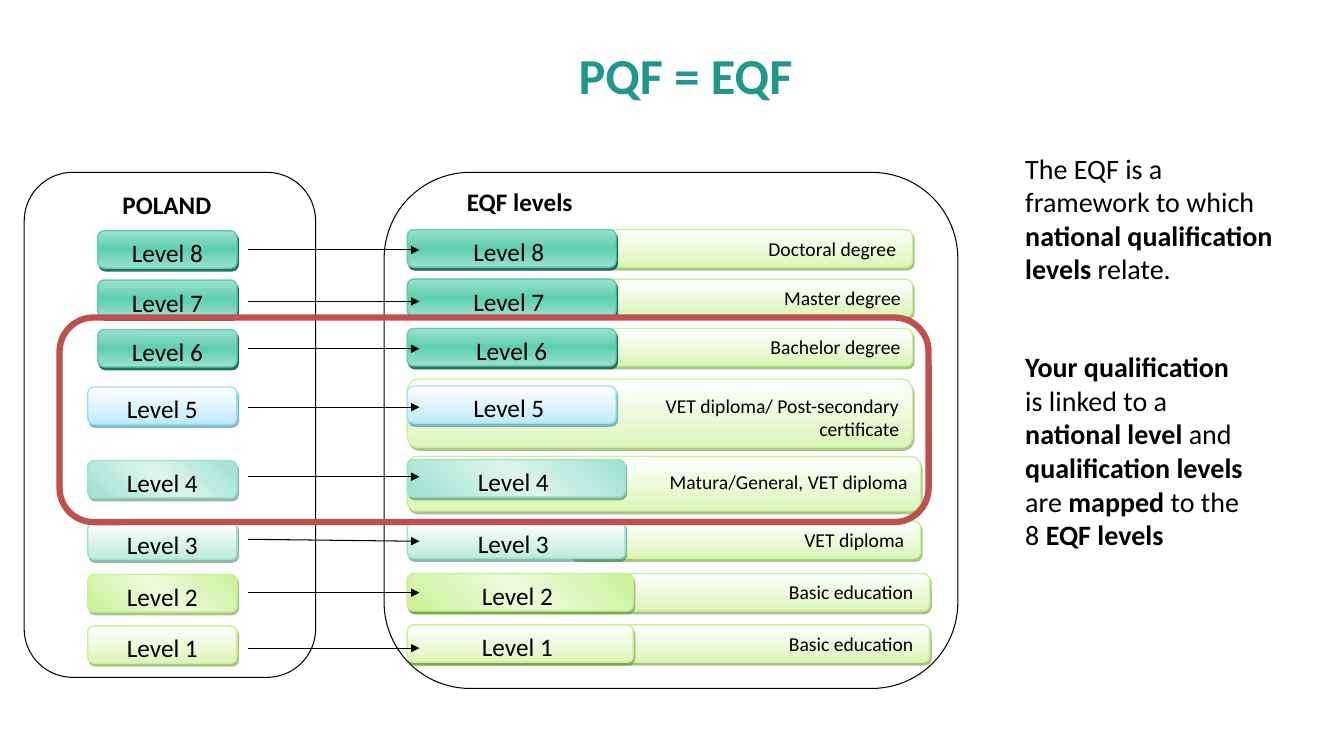
from collections import namedtuple

from lxml import etree
from pptx import Presentation
from pptx.dml.color import RGBColor
from pptx.enum.shapes import MSO_CONNECTOR, MSO_SHAPE
from pptx.enum.text import MSO_ANCHOR, PP_ALIGN
from pptx.oxml.ns import qn
from pptx.util import Inches, Pt

ROUND, RECT = MSO_SHAPE.ROUNDED_RECTANGLE, MSO_SHAPE.RECTANGLE
STRAIGHT = MSO_CONNECTOR.STRAIGHT
TOP = MSO_ANCHOR.TOP
LEFT, CENTER, RIGHT = PP_ALIGN.LEFT, PP_ALIGN.CENTER, PP_ALIGN.RIGHT

FONT = "Calibri"
BLACK = RGBColor(0x00, 0x00, 0x00)
WHITE = RGBColor(0xFF, 0xFF, 0xFF)
TEAL = RGBColor(0x21, 0x96, 0x8F)
RED = RGBColor(0xC0, 0x50, 0x4D)
SEA = RGBColor(0x5D, 0xCE, 0xAF)
MINT = RGBColor(0x9D, 0xE1, 0xCF)
MIST = RGBColor(0xBE, 0xEB, 0xDE)
FOAM = RGBColor(0xDE, 0xF5, 0xEE)
PINE = RGBColor(0x22, 0x72, 0x5C)
SKY = RGBColor(0xBE, 0xEA, 0xFA)
AZURE = RGBColor(0x9E, 0xE0, 0xF7)
NAVY = RGBColor(0x0B, 0x75, 0x9B)
LIME = RGBColor(0xC9, 0xF2, 0x96)
PALE = RGBColor(0xDB, 0xF6, 0xB9)
CREAM = RGBColor(0xED, 0xFA, 0xDC)
MOSS = RGBColor(0x55, 0x8C, 0x11)

# Colours from top to bottom, clockwise angle, edge, shadow colour and opacity
Look = namedtuple("Look", "stops angle edge shade alpha")
DEEP = Look((MINT, SEA, MINT), 90, SEA, PINE, 100)
BLUE = Look((WHITE, SKY), 90, AZURE, NAVY, 50)
GLOW = Look((MINT, FOAM, MINT), 315, MINT, PINE, 50)
SOFT = Look((WHITE, MIST), 90, MINT, PINE, 50)
LEAF = Look((LIME, CREAM, LIME), 315, LIME, MOSS, 50)
PLAIN = Look((WHITE, PALE), 90, LIME, MOSS, 50)

# Lengths in inches; degree is (left, top, width, height) of its bar
Level = namedtuple("Level", "num look top wide home degree award start end")
BAR = 0.37
BAR_X = 4.04
LEVELS = [
    Level(8, DEEP, 2.28, 2.07, 1.38, (4.04, 2.28, 5.01, BAR),
          "Doctoral degree ", 2.48, 2.48),
    Level(7, DEEP, 2.77, 2.07, 1.38, (4.04, 2.77, 5.01, BAR),
          "Master degree", 2.99, 2.99),
    Level(6, DEEP, 3.26, 2.07, 1.38, (4.04, 3.26, 5.01, BAR),
          "Bachelor degree", 3.46, 3.46),
    Level(5, BLUE, 3.83, 2.07, 1.48, (4.04, 3.76, 5.01, 0.68),
          "VET diploma/ Post-secondary certificate", 4.04, 4.04),
    Level(4, GLOW, 4.56, 2.16, 1.48, (4.04, 4.53, 5.09, 0.54),
          "Matura/General, VET diploma", 4.73, 4.73),
    Level(3, SOFT, 5.17, 2.16, 1.48, (5.66, 5.17, 3.47, BAR),
          "VET diploma ", 5.35, 5.37),
    Level(2, LEAF, 5.69, 2.24, 1.48, (4.04, 5.69, 5.18, BAR),
          "Basic education ", 5.88, 5.88),
    Level(1, PLAIN, 6.2, 2.24, 1.48, (4.04, 6.2, 5.18, BAR),
          "Basic education ", 6.43, 6.43),
]

INTRO = [("The EQF is a framework to which ", False),
         ("national qualification levels ", True), ("relate.", False)]
LINK = [("Your qualification ", True), ("is linked to a ", False),
        ("national level", True), (" and ", False),
        ("qualification levels ", True), ("are ", False), ("mapped", True),
        (" to the 8 ", False), ("EQF levels", True)]


def write(shape, parts, size, align, color=BLACK):
    """Fill a shape with one paragraph of (text, bold) parts."""
    frame = shape.text_frame
    frame.word_wrap = True
    frame.vertical_anchor = TOP
    para = frame.paragraphs[0]
    para.alignment = align
    for text, bold in parts:
        run = para.add_run()
        run.text = text
        font = run.font
        font.name, font.size, font.bold = FONT, Pt(size), bold
        font.color.rgb = color
    return frame


def panel(slide, box, kind=ROUND, fill=None, edge=None, width=0.75):
    shape = slide.shapes.add_shape(kind, *map(Inches, box))
    shape.shadow.inherit = False
    if fill is None:
        shape.fill.background()
    else:
        shape.fill.solid()
        shape.fill.fore_color.rgb = fill
    if edge is None:
        shape.line.fill.background()
    else:
        shape.line.color.rgb = edge
        shape.line.width = Pt(width)
    return shape


def tint(parent, color):
    return etree.SubElement(parent, qn("a:srgbClr"), val=str(color))


def bar(slide, box, look):
    """Add a rounded bar with a gradient and a hard shadow."""
    shape = panel(slide, box, edge=look.edge, width=1)
    shape.fill.gradient()
    shape.fill.gradient_angle = 360 - look.angle
    props = shape._element.spPr
    stops = props.find(".//" + qn("a:gsLst"))
    for old in list(stops):
        stops.remove(old)
    for i, color in enumerate(look.stops):
        pos = 100000 * i // (len(look.stops) - 1)
        tint(etree.SubElement(stops, qn("a:gs"), pos=str(pos)), color)
    shade = etree.SubElement(
        props.find(qn("a:effectLst")), qn("a:outerShdw"), blurRad="0",
        dist=str(Pt(2.2)), dir=str(63 * 60000), rotWithShape="0")
    etree.SubElement(tint(shade, look.shade), qn("a:alpha"),
                     val=str(look.alpha * 1000))
    return shape


def arrow(slide, left, top, right, end):
    line = slide.shapes.add_connector(
        STRAIGHT, *map(Inches, (left, top, right, end)))
    line.line.color.rgb = BLACK
    line.line.width = Pt(0.75)
    etree.SubElement(line.line._get_or_add_ln(), qn("a:tailEnd"),
                     type="triangle")
    etree.SubElement(line._element.spPr, qn("a:effectLst"))


def label(slide, box, text):
    shape = panel(slide, box, RECT, WHITE)
    write(shape, [(text, True)], 18, CENTER)


def poland(slide, box):
    left, top, wide, _ = box
    panel(slide, box, fill=WHITE, edge=BLACK)
    label(slide, (left + 0.76, top + 0.12, 1.31, 0.35), "POLAND")
    edge = left + wide - 0.78
    for row in LEVELS:
        spot = (edge - row.home, row.top + 0.01, row.home, BAR)
        shape = bar(slide, spot, row.look)
        write(shape, [(f"Level {row.num}", False)], 18, CENTER)


def europe(slide, box):
    left, top, _, _ = box
    panel(slide, box, fill=WHITE, edge=BLACK)
    label(slide, (left + 0.61, top + 0.09, 1.47, 0.31), "EQF levels")
    for row in LEVELS:
        frame = write(bar(slide, row.degree, PLAIN), [(row.award, False)],
                      14, RIGHT)
        if row.degree[3] > BAR:
            frame.margin_left = Inches(row.wide + 0.2)
            frame.margin_top = Inches(0.11)
        shape = bar(slide, (BAR_X, row.top, row.wide, BAR), row.look)
        tail = "" if row.num == 6 else " "
        write(shape, [(f"Level {row.num}{tail}", False)], 18, CENTER)


def note(slide, box, parts, size=20, align=LEFT, color=BLACK, indent=0.09):
    shape = slide.shapes.add_textbox(*map(Inches, box))
    frame = write(shape, parts, size, align, color)
    props = frame.paragraphs[0]._p.get_or_add_pPr()
    props.set("marL", str(Inches(indent)))
    return frame


def main():
    deck = Presentation()
    deck.slide_width, deck.slide_height = Inches(13.33), Inches(7.5)
    slide = deck.slides.add_slide(deck.slide_layouts[6])
    note(slide, (5.52, 0.39, 2.56, 0.54), [("PQF = EQF", True)],
         36, CENTER, TEAL, 0)
    intro = note(slide, (9.98, 1.45, 2.89, 1.54), INTRO)
    intro.margin_right = Inches(0.2)
    europe(slide, (3.81, 1.71, 5.69, 5.12))
    poland(slide, (0.24, 1.71, 2.89, 5.01))
    for row in LEVELS:
        arrow(slide, 2.46, row.start, 4.16, row.end)
    panel(slide, (0.59, 3.15, 8.62, 2.03), edge=RED, width=4.5)
    note(slide, (9.98, 3.42, 2.48, 2.12), LINK)
    deck.save("out.pptx")


if __name__ == "__main__":
    main()
